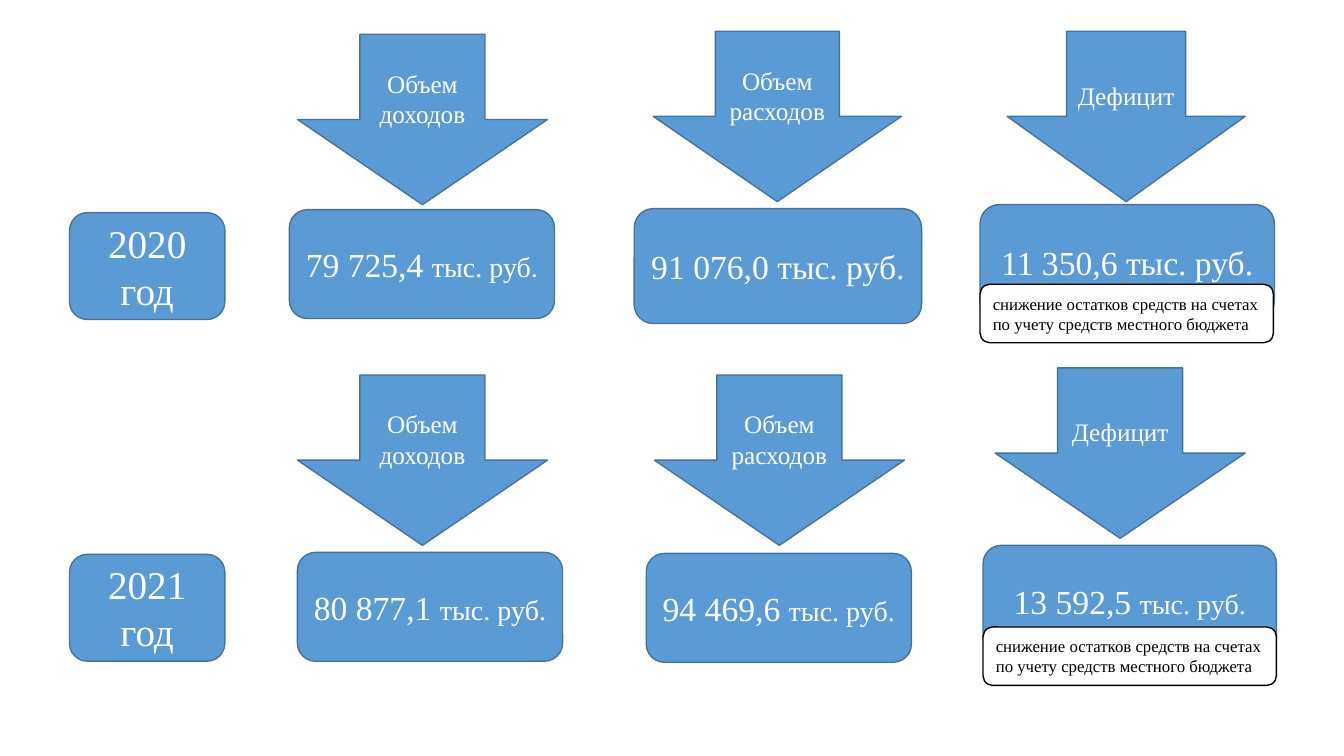
import pptx
import pptx.util
import pptx.dml.color
import pptx.enum.shapes
import pptx.enum.text

PX = 9144  # 100 px to the inch
COLORS = {"blue": "5B9BD5", "edge": "43739E", "white": "FFFFFF", "black": "000000"}
SHAPES = pptx.enum.shapes.MSO_SHAPE
ALIGN = pptx.enum.text.PP_ALIGN
BLUE_BLOCK = {"fill": "blue", "line": "edge", "text": "white", "align": ALIGN.CENTER}
WHITE_NOTE = {"fill": "white", "line": "black", "text": "black", "align": ALIGN.LEFT}

deck = pptx.Presentation()
deck.slide_width, deck.slide_height = 1333 * PX, 750 * PX
slide = deck.slides.add_slide(deck.slide_layouts[6])


def rgb(name):
    return pptx.dml.color.RGBColor.from_string(COLORS[name])


def add_block(kind, box, runs, style=BLUE_BLOCK):
    block = slide.shapes.add_shape(kind, *[length * PX for length in box])
    block.shadow.inherit = False
    block.fill.solid()
    block.fill.fore_color.rgb = rgb(style["fill"])
    block.line.color.rgb = rgb(style["line"])
    block.line.width = pptx.util.Pt(1)
    frame = block.text_frame
    frame.word_wrap = True
    frame.vertical_anchor = pptx.enum.text.MSO_ANCHOR.MIDDLE
    paragraph = frame.paragraphs[0]
    paragraph.alignment = style["align"]
    for text, size in runs:
        run = paragraph.add_run()
        run.text = text
        font_format = {"name": "Times New Roman", "size": pptx.util.Pt(size)}
        for attribute, value in font_format.items():
            setattr(run.font, attribute, value)
        run.font.color.rgb = rgb(style["text"])


UNIT = "тыс. руб."
NOTE = "снижение остатков средств на счетах по учету средств местного бюджета"

# Each year: label box, then (heading, arrow box, amount, unit size, amount box)
years = [
    ("2020 год", (69, 211, 154, 106), [
        ("Объем доходов", (295, 34, 248, 169), "79 725,4 ", 20, (287, 208, 263, 108)),
        ("Объем расходов", (648, 31, 246, 169), "91 076,0 ", 24, (629, 207, 285, 114)),
        ("Дефицит", (999, 31, 236, 169), "11 350,6 ", 24, (972, 203, 292, 114)),
    ], (972, 282, 291, 58)),
    ("2021 год", (69, 550, 154, 106), [
        ("Объем доходов", (295, 372, 248, 169), "80 877,1 ", 20, (295, 548, 263, 108)),
        ("Объем расходов", (649, 372, 248, 169), "94 469,6 ", 20, (641, 549, 263, 108)),
        ("Дефицит", (987, 365, 248, 169), "13 592,5 ", 20, (975, 541, 291, 110)),
    ], (975, 622, 291, 58)),
]

for year, year_box, indicators, note_box in years:
    # Year label
    add_block(SHAPES.ROUNDED_RECTANGLE, year_box, [(year, 28)])
    # Arrows pointing to the amounts
    for heading, arrow_box, amount, unit_size, amount_box in indicators:
        add_block(SHAPES.DOWN_ARROW, arrow_box, [(heading, 18)])
        add_block(SHAPES.ROUNDED_RECTANGLE, amount_box, [(amount, 24), (UNIT, unit_size)])
    # Source of deficit funding, over the deficit amount
    add_block(SHAPES.ROUNDED_RECTANGLE, note_box, [(NOTE, 12)], WHITE_NOTE)

deck.save("out.pptx")
